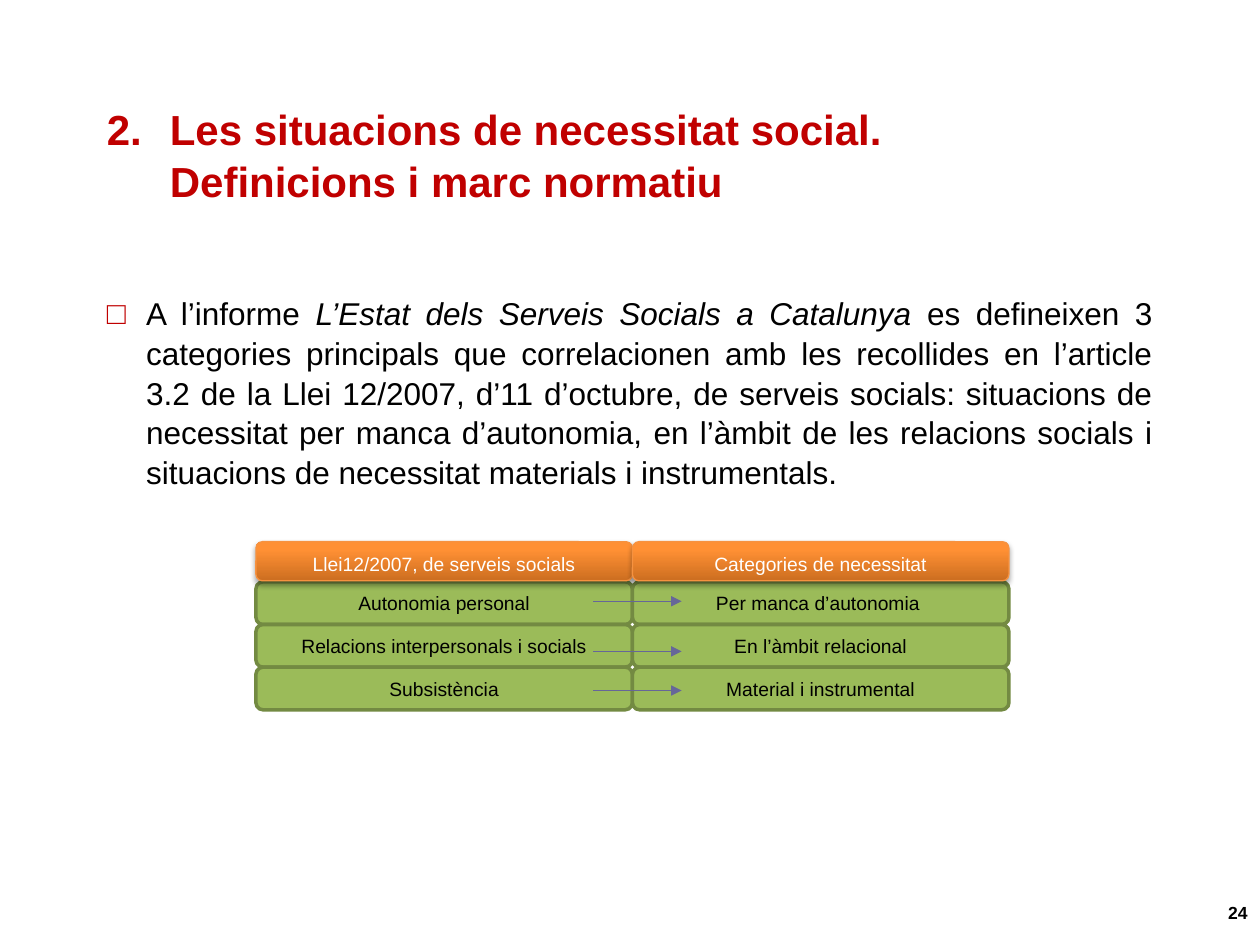
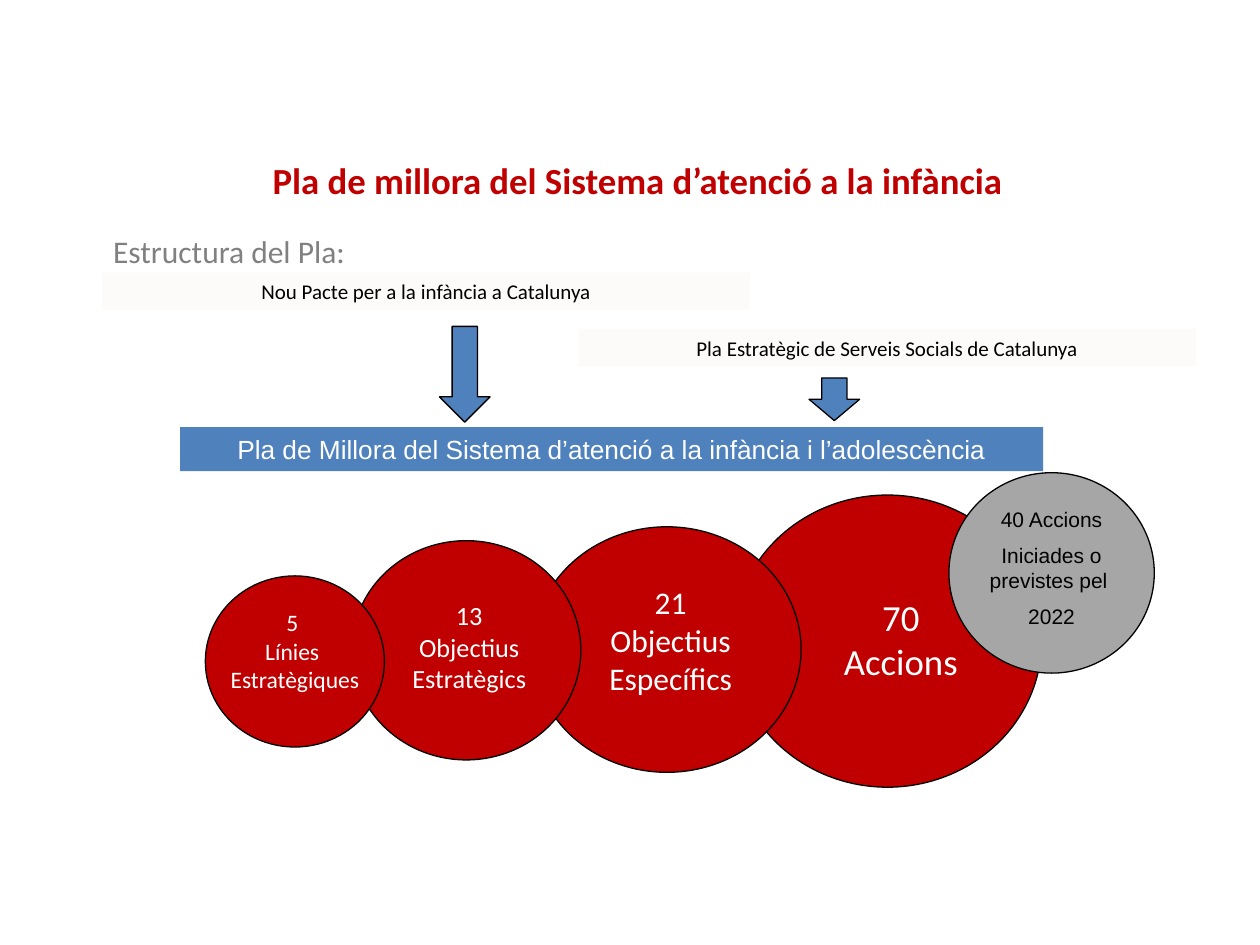
import copy

import pptx
import pptx.dml.color
import pptx.enum.shapes
import pptx.enum.text
import pptx.oxml.ns
import pptx.util
from lxml import etree

Cm = pptx.util.Cm
Pt = pptx.util.Pt
ALIGN = pptx.enum.text.PP_ALIGN
ANCHOR = pptx.enum.text.MSO_ANCHOR
SHAPE = pptx.enum.shapes.MSO_SHAPE
qn = pptx.oxml.ns.qn

RED = "C00000"
BLUE = "4F81BD"
GREEN = "9BBB59"
DARK_GREEN = "738A42"
GREY = "A6A6A6"
CREAM = "FCFBF9"
BLACK = "000000"
WHITE = "FFFFFF"
HEADER_STOPS = [(0, "CC6E20"), (0.8, "FF9034"), (1, "FF9136")]


def color(value):
    return pptx.dml.color.RGBColor.from_string(value)


def apply(target, values):
    for name, value in values.items():
        setattr(target, name, value)


def font(size, hue=BLACK, name="Arial", **extra):
    return {"size": Pt(size), "name": name, "color": hue, **extra}


def add_node(parent, tag, **attributes):
    return etree.SubElement(parent, qn(tag), attributes)


class SlideBuilder:
    title_font = {"hue": RED, "bold": True}
    outline = (BLACK, 0.75)

    def __init__(self, deck):
        self.deck = deck
        self.page = None

    def new_page(self, layout):
        self.page = self.deck.slides.add_slide(self.deck.slide_layouts[layout])

    def set_text(self, frame, paragraphs, style, layout=None, gap=0, **frame_values):
        apply(frame, {"word_wrap": True, **frame_values})
        for index, spans in enumerate(paragraphs):
            para = frame.add_paragraph() if index else frame.paragraphs[0]
            apply(para, {"alignment": ALIGN.CENTER, "space_before": Pt(gap if index else 0), **(layout or {})})
            for text, extra in [(spans, {})] if isinstance(spans, str) else spans:
                if text is None:
                    para.add_line_break()
                    continue
                span = para.add_run()
                span.text = text
                values = {**style, **extra}
                span.font.color.rgb = color(values.pop("color"))
                apply(span.font, values)

    def place(self, box, area):
        apply(box, dict(zip(("left", "top", "width", "height"), map(Cm, area))))
        return box

    def placeholder(self, index, area, paragraphs, style, layout, **frame_values):
        box = self.place(self.page.placeholders[index], area)
        frame_values["auto_size"] = pptx.enum.text.MSO_AUTO_SIZE.NONE
        self.set_text(box.text_frame, paragraphs, style, layout, **frame_values)
        return box.text_frame.paragraphs[0]

    def hang(self, para, indent):
        properties = para._p.get_or_add_pPr()
        properties.set("marL", str(Cm(indent)))
        properties.set("indent", str(-Cm(indent)))
        return properties

    def text(self, area, paragraphs, style, layout=None, **frame_values):
        box = self.page.shapes.add_textbox(*map(Cm, area))
        self.set_text(box.text_frame, paragraphs, style, layout, **frame_values)

    def shape(self, kind, area, fill=None, line=None):
        box = self.page.shapes.add_shape(kind, *map(Cm, area))
        box.shadow.inherit = False
        if fill:
            box.fill.solid()
            box.fill.fore_color.rgb = color(fill)
        if line:
            box.line.color.rgb = color(line[0])
            box.line.width = Pt(line[1])
        else:
            box.line.fill.background()
        return box

    def bar(self, area, text, style, fill):
        box = self.shape(SHAPE.RECTANGLE, area, fill)
        self.set_text(box.text_frame, [text], style, vertical_anchor=ANCHOR.TOP)

    def cell(self, area, text, header=False):
        line = ("F69240", 0.75) if header else (DARK_GREEN, 2)
        box = self.shape(SHAPE.ROUNDED_RECTANGLE, area, None if header else GREEN, line)
        if header:
            self.gradient(box)
            self.drop_shadow(box)
        self.set_text(box.text_frame, [text], font(11, WHITE if header else BLACK),
                      vertical_anchor=ANCHOR.BOTTOM if header else ANCHOR.MIDDLE,
                      margin_top=0, margin_bottom=Cm(0.08) if header else 0)

    def gradient(self, box):
        box.fill.gradient()
        box.fill.gradient_angle = 90
        stops = box._element.spPr.find(".//" + qn("a:gsLst"))
        stops.append(copy.deepcopy(stops[1]))
        for stop, (position, hue) in zip(box.fill.gradient_stops, HEADER_STOPS):
            stop.position = position
            stop.color.rgb = color(hue)

    def drop_shadow(self, box):
        effects = box._element.spPr.find(qn("a:effectLst"))
        shadow = add_node(effects, "a:outerShdw", blurRad=str(Pt(3.1)), dist=str(Pt(1.8)),
                          dir="5400000", rotWithShape="0")
        add_node(add_node(shadow, "a:srgbClr", val=BLACK), "a:alpha", val="35000")

    def arrow(self, left, right, height):
        line = self.page.shapes.add_connector(
            pptx.enum.shapes.MSO_CONNECTOR.STRAIGHT, Cm(left), Cm(height), Cm(right), Cm(height))
        line.line.color.rgb = color("666699")
        line.line.width = Pt(0.75)
        add_node(line._element.spPr.find(qn("a:ln")), "a:tailEnd", type="triangle")
        add_node(line._element.spPr, "a:effectLst")


def build_needs(builder):
    builder.new_page(1)
    builder.text((19.48, 17.73, 5.92, 1.32), ["24"], font(10, bold=True),
                 {"alignment": ALIGN.RIGHT}, vertical_anchor=ANCHOR.MIDDLE)
    title = builder.placeholder(
        0, (1.9, 1.7, 22, 2.79),
        [[("Les situacions de necessitat social. ", {}), (None, {}), ("Definicions i marc normatiu", {})]],
        font(24, **builder.title_font), {"alignment": ALIGN.LEFT, "line_spacing": 1.04},
        vertical_anchor=ANCHOR.MIDDLE)
    add_node(builder.hang(title, 1.27), "a:buAutoNum", type="arabicPeriod", startAt="2")

    body = builder.placeholder(
        1, (1.9, 5.77, 21.59, 4.17),
        [[("A l’informe ", {}),
          ("L’Estat dels Serveis Socials a Catalunya ", {"italic": True}),
          ("es defineixen 3 categories principals que correlacionen amb les recollides en l’article 3.2 "
           "de la Llei 12/2007, d’11 d’octubre, de serveis socials: situacions de necessitat per manca "
           "d’autonomia, en l’àmbit de les relacions socials i situacions de necessitat materials i "
           "instrumentals.", {})]],
        font(18), {"alignment": ALIGN.JUSTIFY, "line_spacing": 1.05}, vertical_anchor=ANCHOR.TOP)
    bullet = builder.hang(body, 0.79)
    add_node(add_node(bullet, "a:buClr"), "a:srgbClr", val=RED)
    add_node(bullet, "a:buFont", typeface="Arial")
    add_node(bullet, "a:buChar", char="□")

    left, top, width, row_height = 5.16, 11.73, 7.59, 0.86
    header_top, header_height = 10.92, 0.79
    columns = [
        ("Llei12/2007, de serveis socials",
         ["Autonomia personal", "Relacions interpersonals i socials", "Subsistència"]),
        ("Categories de necessitat",
         ["Per manca d’autonomia ", "En l’àmbit relacional", "Material i instrumental"]),
    ]
    for column, (_, entries) in enumerate(columns):
        for row, entry in enumerate(entries):
            builder.cell((left + column * width, top + row * row_height, width, row_height), entry)
    for height in (12.12, 13.13, 13.92):
        builder.arrow(11.96, 13.74, height)
    for column, (header, _) in enumerate(columns):
        builder.cell((left + column * width, header_top, width, header_height), header, header=True)


def build_plan(builder):
    builder.new_page(5)
    builder.placeholder(0, (2.06, 3.05, 21.59, 0.91), ["Pla de millora del Sistema d’atenció a la infància"],
                        font(21, name="Calibri", **builder.title_font), {"alignment": ALIGN.CENTER},
                        vertical_anchor=ANCHOR.TOP)
    builder.text((2.03, 4.55, 5.38, 1.02), ["Estructura del Pla:"], font(18, "808080", "Calibri"),
                 {"alignment": ALIGN.LEFT}, word_wrap=False)

    source_font = font(12, name="Calibri")
    builder.bar((2.06, 5.49, 13.06, 0.76), "Nou Pacte per a la infància a Catalunya", source_font, CREAM)
    builder.bar((3.63, 8.61, 17.4, 0.89), "Pla de Millora del Sistema d’atenció a la infància i l’adolescència",
                font(15, WHITE), BLUE)
    builder.bar((11.66, 6.63, 12.45, 0.76), "Pla Estratègic de Serveis Socials de Catalunya", source_font, CREAM)
    for area in ((8.86, 6.58, 1.02, 1.93), (16.31, 7.62, 1.02, 0.86)):
        builder.shape(SHAPE.DOWN_ARROW, area, BLUE, builder.outline)

    levels = [
        ((14.78, 9.98, 6.22, 5.89), (16.74, 11.86, 2.84, 2.06), 21, ["70", "Accions"]),
        ((10.74, 10.62, 5.41, 4.95), (12.01, 11.63, 3.02, 2.57), 18, ["21", "Objectius", "Específics"]),
        ((7.09, 10.9, 4.62, 4.42), (8.05, 11.96, 2.82, 2.18), 15, ["13", "Objectius", "Estratègics"]),
        ((4.14, 11.61, 3.61, 3.45), (4.37, 12.14, 3.15, 1.98), 13.5, ["5 ", "Línies ", "Estratègiques"]),
    ]
    for circle, label, size, lines in levels:
        builder.shape(SHAPE.OVAL, circle, RED, builder.outline)
        builder.text(label, lines, font(size, WHITE, "Calibri"), word_wrap=False)

    started = builder.shape(SHAPE.OVAL, (19.13, 9.53, 4.14, 4.04), GREY, builder.outline)
    builder.set_text(started.text_frame, ["40 Accions", "Iniciades o previstes pel ", "2022"], font(12), gap=6,
                     vertical_anchor=ANCHOR.TOP, margin_left=Cm(0.18), margin_right=Cm(0.18),
                     margin_top=Cm(0.1), margin_bottom=Cm(0.1))


def main():
    deck = pptx.Presentation()
    deck.slide_width, deck.slide_height = Cm(25.4), Cm(19.05)
    builder = SlideBuilder(deck)
    build_needs(builder)
    build_plan(builder)
    deck.save("out.pptx")


if __name__ == "__main__":
    main()
